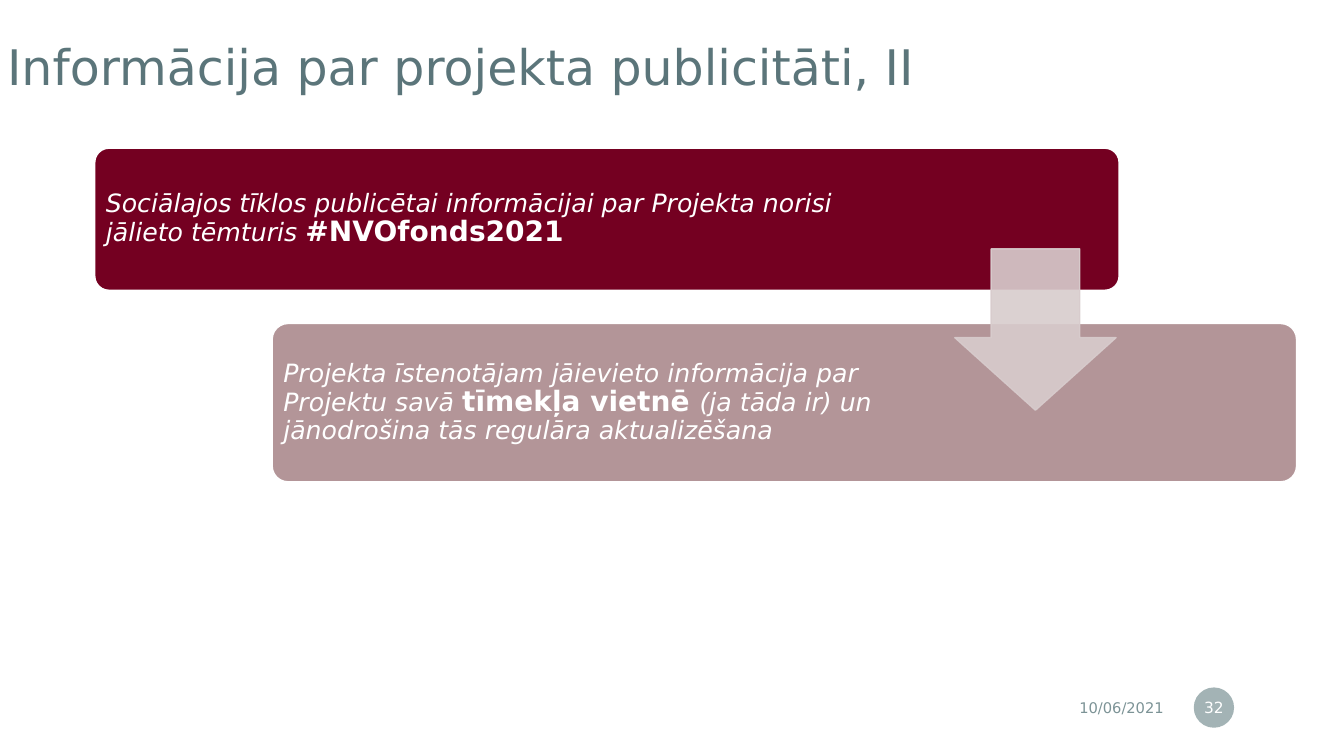
from dataclasses import dataclass

import pptx
import pptx.dml.color
import pptx.enum.shapes
import pptx.enum.text
import pptx.oxml
import pptx.oxml.ns
import pptx.shapes.autoshape
import pptx.slide
import pptx.text.text
import pptx.util

Inches = pptx.util.Inches
Preset = pptx.enum.shapes.MSO_SHAPE
Align = pptx.enum.text.PP_ALIGN


@dataclass(frozen=True)
class Theme:
    font: str = "DejaVu Sans"
    heading: str = "5B757A"
    muted: str = "7C9396"
    white: str = "FFFFFF"
    wine: str = "740021"
    rose: str = "B39598"
    arrow: str = "D8CCCD"
    title_size: float = 35
    body_size: float = 18
    strong_size: float = 20
    date_size: float = 10.5
    number_size: float = 11


THEME = Theme()


@dataclass(frozen=True)
class Box:
    left: float
    top: float
    width: float
    height: float

    def lengths(self) -> tuple[int, int, int, int]:
        return (Inches(self.left), Inches(self.top), Inches(self.width), Inches(self.height))


@dataclass(frozen=True)
class Insets:
    left: float
    top: float
    right: float
    bottom: float


@dataclass(frozen=True)
class Phrase:
    text: str
    size: float
    color: str = THEME.white
    bold: bool = False
    italic: bool = False


@dataclass(frozen=True)
class Step:
    box: Box
    fill: str
    label_width: float
    phrases: list[Phrase]


def body(text: str) -> Phrase:
    return Phrase(text, THEME.body_size, italic=True)


def strong(text: str) -> Phrase:
    return Phrase(text, THEME.strong_size, bold=True)


def write(frame: pptx.text.text.TextFrame, phrases: list[Phrase], insets: Insets,
          align: Align = Align.LEFT, spacing: float = 1.0) -> None:
    frame.word_wrap = True
    frame.vertical_anchor = pptx.enum.text.MSO_ANCHOR.MIDDLE
    frame.margin_left = Inches(insets.left)
    frame.margin_top = Inches(insets.top)
    frame.margin_right = Inches(insets.right)
    frame.margin_bottom = Inches(insets.bottom)
    paragraph = frame.paragraphs[0]
    paragraph.alignment = align
    paragraph.line_spacing = spacing
    for phrase in phrases:
        run = paragraph.add_run()
        run.text = phrase.text
        run.font.name = THEME.font
        run.font.size = pptx.util.Pt(phrase.size)
        run.font.bold = phrase.bold
        run.font.italic = phrase.italic
        run.font.color.rgb = pptx.dml.color.RGBColor.from_string(phrase.color)


def add_text(slide: pptx.slide.Slide, box: Box, phrases: list[Phrase], insets: Insets,
             align: Align = Align.LEFT, spacing: float = 1.0) -> None:
    label = slide.shapes.add_textbox(*box.lengths())
    write(label.text_frame, phrases, insets, align, spacing)


def add_figure(slide: pptx.slide.Slide, preset: Preset, box: Box, fill: str,
               line: str | None = None, adjustments: tuple[float, ...] = (),
               opacity: int = 100) -> pptx.shapes.autoshape.Shape:
    figure = slide.shapes.add_shape(preset, *box.lengths())
    figure.shadow.inherit = False
    for index, value in enumerate(adjustments):
        figure.adjustments[index] = value
    figure.fill.solid()
    figure.fill.fore_color.rgb = pptx.dml.color.RGBColor.from_string(fill)
    if line:
        figure.line.color.rgb = pptx.dml.color.RGBColor.from_string(line)
        figure.line.width = pptx.util.Pt(1)
    else:
        figure.line.fill.background()
    if opacity < 100:
        for color in figure.element.spPr.iter(pptx.oxml.ns.qn("a:srgbClr")):
            alpha = pptx.oxml.parse_xml(f'<a:alpha {pptx.oxml.ns.nsdecls("a")} val="{opacity * 1000}"/>')
            color.append(alpha)
    return figure


def add_step(slide: pptx.slide.Slide, step: Step) -> None:
    add_figure(slide, Preset.ROUNDED_RECTANGLE, step.box, step.fill, THEME.white, (0.1,))
    label = Box(step.box.left + 0.04, step.box.top + 0.04, step.label_width, step.box.height - 0.08)
    add_text(slide, label, step.phrases, Insets(0.07, 0.07, 0.07, 0.07), spacing=0.9)


STEPS = [
    Step(Box(0.94, 1.47, 10.16, 1.41), THEME.wine, 7.68, [
        body("Sociālajos tīklos publicētai informācijai par Projekta norisi jālieto tēmturis "),
        strong("#NVOfonds2021"),
    ]),
    Step(Box(2.7, 3.21, 10.16, 1.57), THEME.rose, 6.67, [
        body("Projekta īstenotājam jāievieto informācija par Projektu savā "),
        strong("tīmekļa vietnē "),
        body("(ja tāda ir) un jānodrošina tās regulāra aktualizēšana"),
    ]),
]


def main() -> None:
    deck = pptx.Presentation()
    deck.slide_width = Inches(13.33)
    deck.slide_height = Inches(7.5)
    slide = deck.slides.add_slide(deck.slide_layouts[6])

    title = Phrase("Informācija par projekta publicitāti, II", THEME.title_size, THEME.heading)
    add_text(slide, Box(-0.13, 0.35, 11.41, 1.19), [title], Insets(0.2, 0.2, 0.2, 0.71), spacing=0.9)

    date = Phrase("10/06/2021", THEME.date_size, THEME.muted)
    add_text(slide, Box(8.63, 6.84, 3.01, 0.35), [date], Insets(0.1, 0.05, 0.1, 0.05), Align.RIGHT)

    badge = add_figure(slide, Preset.OVAL, Box(11.84, 6.82, 0.4, 0.4), THEME.muted, opacity=70)
    number = Phrase("32", THEME.number_size)
    write(badge.text_frame, [number], Insets(0.02, 0.05, 0.02, 0.05), Align.CENTER)

    for step in STEPS:
        add_step(slide, step)
    add_figure(slide, Preset.DOWN_ARROW, Box(9.47, 2.47, 1.6, 1.6), THEME.arrow, THEME.arrow,
               (0.55, 0.45), opacity=90)

    deck.save("out.pptx")


if __name__ == "__main__":
    main()
